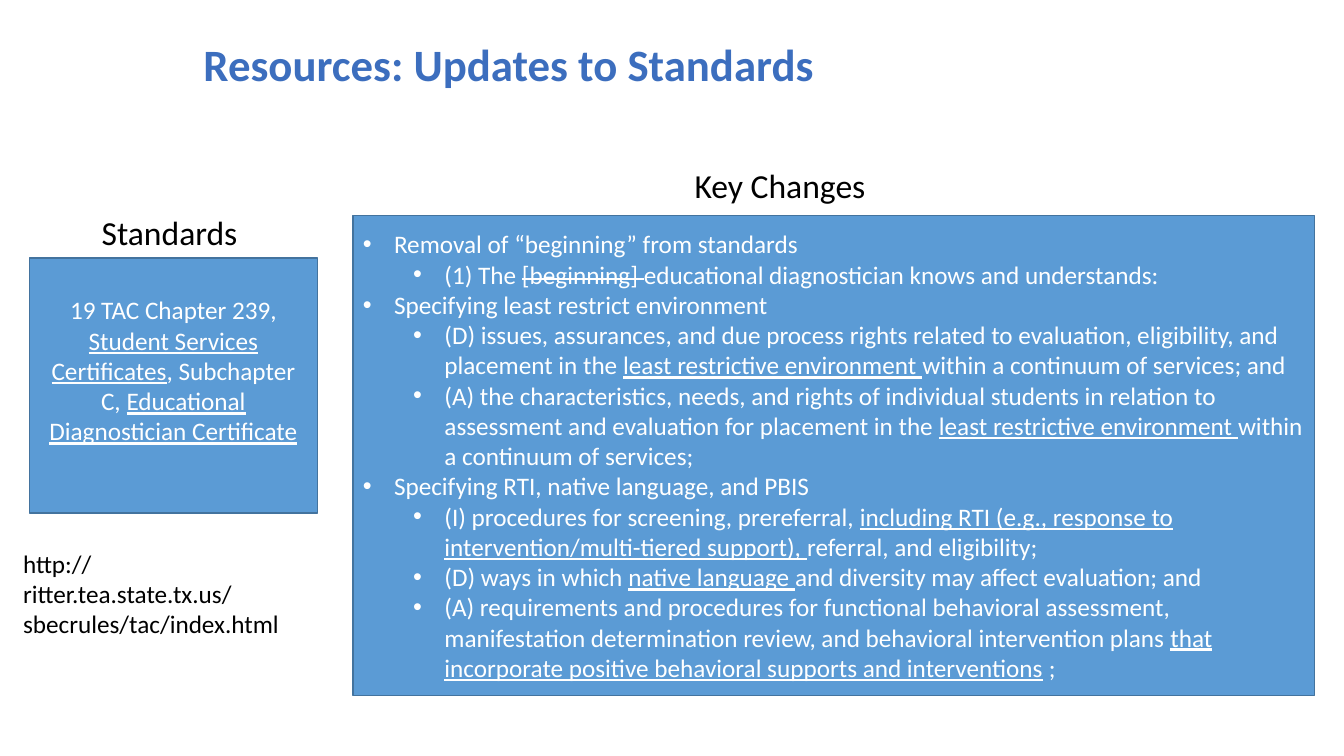
import pptx
import pptx.dml.color
import pptx.enum.shapes
import pptx.enum.text
import pptx.util
from pptx.oxml.ns import qn
from lxml import etree

PX = 9144  # EMU per px, 100 px to the inch
COLORS = {"title": "3C6EBE", "fill": "5B9BD5", "line": "43739E",
          "light": "FFFFFF", "dark": "000000"}
ALIGN = pptx.enum.text.PP_ALIGN
ANCHOR = pptx.enum.text.MSO_ANCHOR

# Runs are (text, style); style is "" plain, "u" underlined, "s" struck through
STANDARDS = [("19 TAC Chapter 239, ", ""), ("Student Services Certificates", "u"),
             (", Subchapter C, ", ""), ("Educational Diagnostician Certificate", "u")]

# Key changes are (level, runs)
KEY_CHANGES = [
    (0, [("Removal of “beginning” from standards", "")]),
    (1, [("(1) The ", ""), ("[beginning] ", "s"),
         ("educational diagnostician knows and understands:", "")]),
    (0, [("Specifying least restrict environment", "")]),
    (1, [("(D) issues, assurances, and due process rights related to evaluation, "
          "eligibility, and placement in the ", ""),
         ("least restrictive environment ", "u"),
         ("within a continuum of services; and", "")]),
    (1, [("(A) the characteristics, needs, and rights of individual students in relation "
          "to assessment and evaluation for placement in the ", ""),
         ("least restrictive environment ", "u"),
         ("within a continuum of services;", "")]),
    (0, [("Specifying RTI, native language, and PBIS", "")]),
    (1, [("(I) procedures for screening, prereferral, ", ""),
         ("including RTI (e.g., response to intervention/multi-tiered support), ", "u"),
         ("referral, and eligibility;", "")]),
    (1, [("(D) ways in which ", ""), ("native language ", "u"),
         ("and diversity may affect evaluation; and", "")]),
    (1, [("(A) requirements and procedures for functional behavioral assessment, "
          "manifestation determination review, and behavioral intervention plans ", ""),
         ("that incorporate positive behavioral supports and interventions", "u"),
         (" ;", "")]),
]


class Deck:
    """Holds the style and the current slide."""

    def __init__(self, width, height, font="Calibri"):
        self.prs = pptx.Presentation()
        self.prs.slide_width, self.prs.slide_height = width * PX, height * PX
        self.font = font
        self.slide = self.prs.slides.add_slide(self.prs.slide_layouts[6])

    def color(self, name):
        return pptx.dml.color.RGBColor.from_string(COLORS[name])

    def style(self, r, size, color, bold=False):
        r.font.name, r.font.size, r.font.bold = self.font, pptx.util.Pt(size), bold
        r.font.color.rgb = self.color(color)

    def label(self, x, y, w, h, text, size, color="dark", bold=False,
              anchor=ANCHOR.TOP):
        tf = self.slide.shapes.add_textbox(x * PX, y * PX, w * PX, h * PX).text_frame
        tf.word_wrap = True
        tf.vertical_anchor = anchor
        tf.text = text
        self.style(tf.paragraphs[0].runs[0], size, color, bold)
        return tf

    def panel(self, x, y, w, h):
        sp = self.slide.shapes.add_shape(pptx.enum.shapes.MSO_SHAPE.RECTANGLE,
                                         x * PX, y * PX, w * PX, h * PX)
        sp.shadow.inherit = False
        sp.fill.solid()
        sp.fill.fore_color.rgb = self.color("fill")
        sp.line.color.rgb = self.color("line")
        sp.line.width = pptx.util.Pt(1)
        tf = sp.text_frame
        tf.word_wrap = True
        tf.vertical_anchor = ANCHOR.MIDDLE
        return tf

    def runs(self, p, parts, size=18):
        for text, mark in parts:
            r = p.add_run()
            r.text = text
            self.style(r, size, "light")
            if mark == "u":
                r.font.underline = True
            elif mark == "s":
                r.font._element.set("strike", "sngStrike")

    def bullets(self, tf, items):
        for i, (level, parts) in enumerate(items):
            p = tf.add_paragraph() if i else tf.paragraphs[0]
            p.alignment = ALIGN.LEFT
            p.level = level
            pPr = p._p.get_or_add_pPr()
            pPr.set("marL", str((31 + 50 * level) * PX))
            pPr.set("indent", str(-31 * PX))
            etree.SubElement(pPr, qn("a:buFont")).set("typeface", "Arial")
            etree.SubElement(pPr, qn("a:buChar")).set("char", "•")
            self.runs(p, parts)


def main():
    deck = Deck(1333, 750)

    # Title
    tf = deck.label(192, 27, 1050, 78, "Resources: Updates to Standards", 32,
                    "title", True, ANCHOR.MIDDLE)
    tf.paragraphs[0].line_spacing = 0.9

    # Standards panel, text raised by one line
    tf = deck.panel(29, 256, 286, 253)
    tf.margin_bottom = 35 * PX
    tf.paragraphs[0].alignment = ALIGN.CENTER
    deck.runs(tf.paragraphs[0], STANDARDS)
    deck.label(91, 205, 400, 50, "Standards", 24)
    deck.label(13, 539, 301, 71,
               "http://ritter.tea.state.tx.us/sbecrules/tac/index.html", 18)

    # Key changes panel
    deck.bullets(deck.panel(350, 214, 954, 476), KEY_CHANGES)
    deck.label(679, 159, 624, 50, "Key Changes", 24)

    deck.prs.save("out.pptx")


if __name__ == "__main__":
    main()
